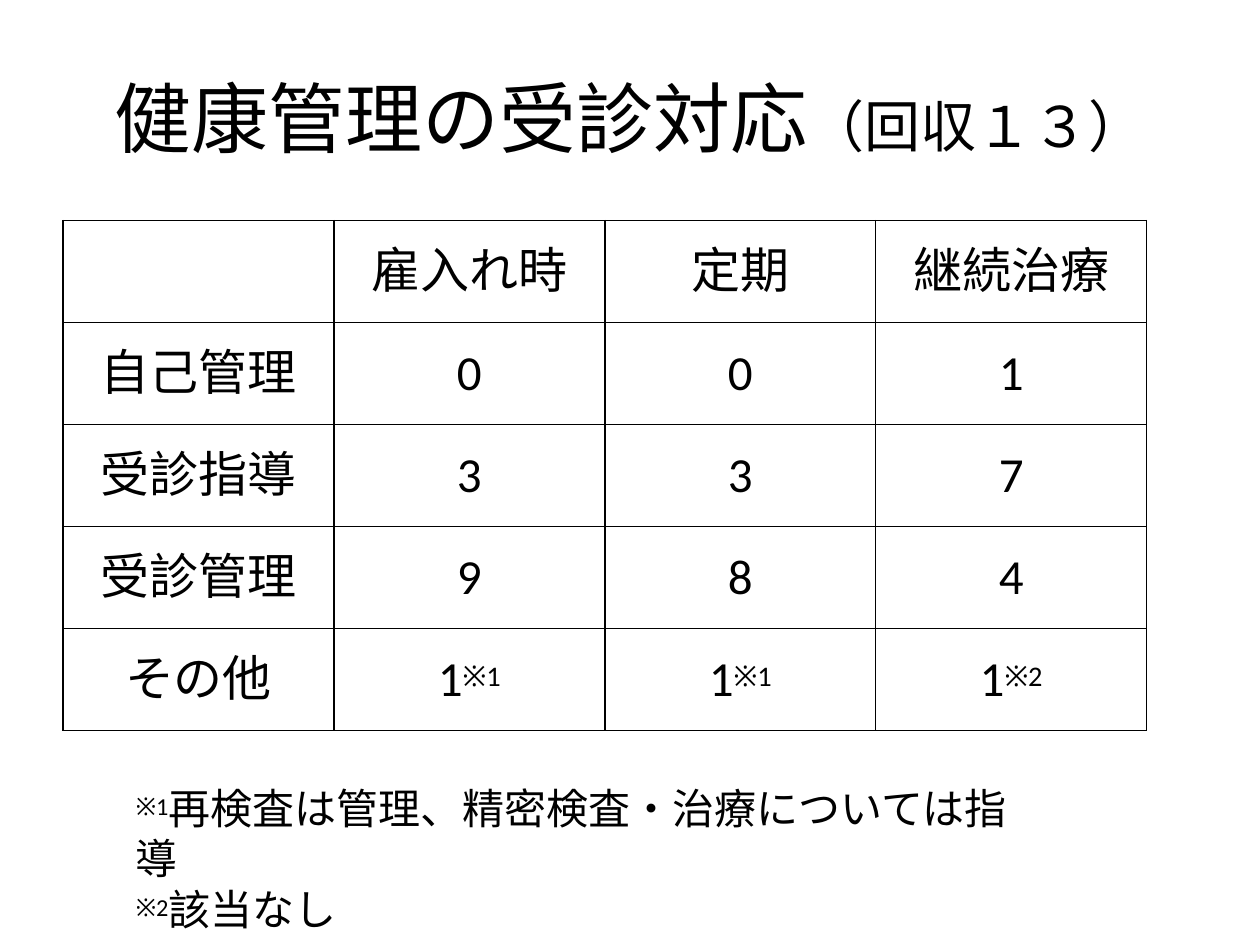
from lxml.etree import SubElement
from pptx import Presentation
from pptx.dml.color import RGBColor
from pptx.enum.text import MSO_ANCHOR, MSO_AUTO_SIZE, PP_ALIGN
from pptx.oxml.ns import qn
from pptx.util import Inches, Pt

BLACK = RGBColor(0x00, 0x00, 0x00)
WHITE = RGBColor(0xFF, 0xFF, 0xFF)
FONT = "Calibri"

# Content: a string is one run, a tuple is a main text and its raised mark
TITLE = "健康管理の受診対応"
TITLE_SUFFIX = "（回収１３）"
RESPONSES = [
    ["", "雇入れ時", "定期", "継続治療"],
    ["自己管理", "0", "0", "1"],
    ["受診指導", "3", "3", "7"],
    ["受診管理", "9", "8", "4"],
    ["その他", ("1", "※1"), ("1", "※1"), ("1", "※2")],
]
FOOTNOTES = [
    ("※1", "再検査は管理、精密検査・治療については指導"),
    ("※2", "該当なし"),
]
COLUMN_WIDTH, ROW_HEIGHT = 2.15, 0.81


def add_text(paragraph, text, size, raised=False, align=None):
    run = paragraph.add_run()
    run.text = text
    run.font.size = Pt(size)
    run.font.name = FONT
    run.font.color.rgb = BLACK
    properties = run._r.get_or_add_rPr()
    SubElement(properties, qn("a:ea")).set("typeface", FONT)
    if raised:
        properties.set("baseline", "20000")
    if align is not None:
        paragraph.alignment = align


def add_borders(cell):
    properties = cell._tc.get_or_add_tcPr()
    for position, side in enumerate(("a:lnL", "a:lnR", "a:lnT", "a:lnB")):
        border = SubElement(properties, qn(side), w=str(Pt(1)))
        color = SubElement(SubElement(border, qn("a:solidFill")), qn("a:srgbClr"))
        color.set("val", str(BLACK))
        properties.insert(position, border)  # borders go before the fill


presentation = Presentation()
presentation.slide_width, presentation.slide_height = Inches(10), Inches(7.5)
slide = presentation.slides.add_slide(presentation.slide_layouts[5])

# Title
title = slide.shapes.title
title.left, title.top = Inches(0.5), Inches(0.3)
title.width, title.height = Inches(9), Inches(1.25)
title.text_frame.vertical_anchor = MSO_ANCHOR.MIDDLE
heading = title.text_frame.paragraphs[0]
add_text(heading, TITLE, 44, align=PP_ALIGN.CENTER)
add_text(heading, TITLE_SUFFIX, 32)

# Response table
row_count, column_count = len(RESPONSES), len(RESPONSES[0])
table = slide.shapes.add_table(
    row_count, column_count, Inches(0.5), Inches(1.75),
    Inches(COLUMN_WIDTH * column_count), Inches(ROW_HEIGHT * row_count),
).table
table.first_row = table.horz_banding = False
for row, responses in enumerate(RESPONSES):
    for column, response in enumerate(responses):
        cell = table.cell(row, column)
        cell.fill.solid()
        cell.fill.fore_color.rgb = WHITE
        cell.vertical_anchor = MSO_ANCHOR.MIDDLE
        add_borders(cell)
        count, *marks = (response,) if isinstance(response, str) else response
        paragraph = cell.text_frame.paragraphs[0]
        if count:
            add_text(paragraph, count, 28, align=PP_ALIGN.CENTER)
        for mark in marks:
            add_text(paragraph, mark, 28, raised=True)

# Footnotes
notes = slide.shapes.add_textbox(
    Inches(0.98), Inches(6.16), Inches(7.41), Inches(1.21)
).text_frame
notes.word_wrap = False
notes.auto_size = MSO_AUTO_SIZE.SHAPE_TO_FIT_TEXT
for index, (mark, explanation) in enumerate(FOOTNOTES):
    paragraph = notes.add_paragraph() if index else notes.paragraphs[0]
    add_text(paragraph, mark, 24, raised=True)
    add_text(paragraph, explanation, 24)

presentation.save("out.pptx")
